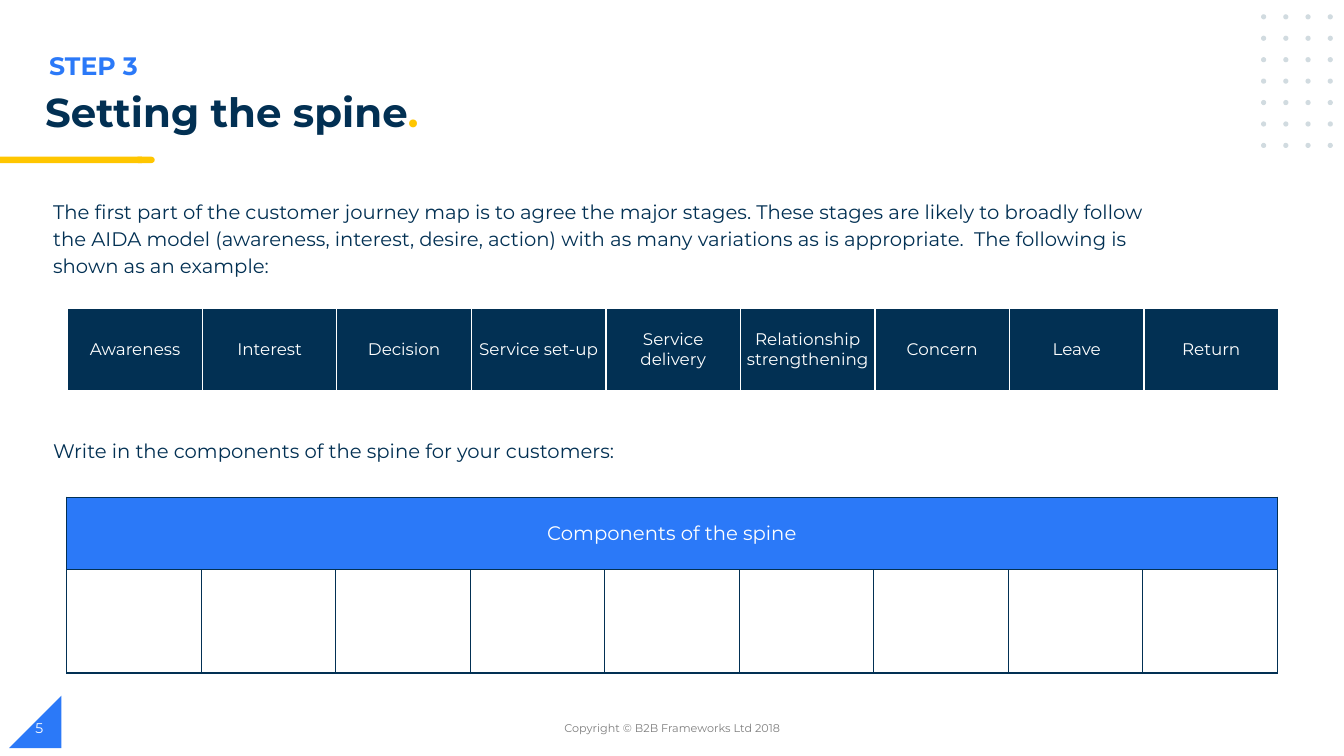
import lxml.etree
import pptx
import pptx.dml.color
import pptx.enum.shapes
import pptx.enum.text
import pptx.oxml.ns
import pptx.util

Cm = pptx.util.Cm
RGBColor = pptx.dml.color.RGBColor
Shape = pptx.enum.shapes.MSO_SHAPE
Align = pptx.enum.text.PP_ALIGN
Anchor = pptx.enum.text.MSO_ANCHOR

NAVY = RGBColor(0x02, 0x30, 0x53)
BLUE = RGBColor(0x2B, 0x79, 0xF8)
YELLOW = RGBColor(0xFF, 0xC6, 0x00)
WHITE = RGBColor(0xFF, 0xFF, 0xFF)
GREY = RGBColor(0x7F, 0x7F, 0x7F)
PALE = RGBColor(0xD1, 0xDB, 0xE0)

STAGES = ["Awareness", "Interest", "Decision", "Service set-up", "Service delivery",
          "Relationship strengthening", "Concern", "Leave", "Return"]
SPINE_HEADING = "Components of the spine"
INTRO = ("The first part of the customer journey map is to agree the major stages. "
         "These stages are likely to broadly follow the AIDA model (awareness, interest, "
         "desire, action) with as many variations as is appropriate.  The following is "
         "shown as an example:")

HEADING = {"size": pptx.util.Pt(28.8), "bold": True}
STEP = {"size": pptx.util.Pt(18), "bold": True}
BODY = {"size": pptx.util.Pt(14)}
STAGE = {"size": pptx.util.Pt(12)}
NUMBER = {"size": pptx.util.Pt(10)}
SMALL = {"size": pptx.util.Pt(8)}

TOP = {"vertical_anchor": Anchor.TOP}
MIDDLE = {"vertical_anchor": Anchor.MIDDLE}
CENTRED = {"alignment": Align.CENTER}

TEXTS = [
    ((0.89, 2.21, 14.33, 1.42), [("Setting the spine", NAVY), (".", YELLOW)],
     HEADING, {"line_spacing": 0.9}, TOP),
    ((1.09, 4.83, 28.37, 2.4), [(INTRO, NAVY)], BODY, {"line_spacing": 1.15}, TOP),
    ((1.09, 10.94, 28.37, 0.9),
     [("Write in the components of the spine for your customers:", NAVY)], BODY, {}, TOP),
    ((11.23, 17.83, 11.43, 1.02), [("Copyright © B2B Frameworks Ltd 2018", GREY)],
     SMALL, CENTRED, MIDDLE),
    ((0.64, 17.83, 7.62, 1.02), [("5", WHITE)], NUMBER, {}, MIDDLE),
    ((0.99, 1.14, 3.99, 1.02), [("STEP 3", BLUE)], STEP, {}, TOP),
]

DOT_COLUMNS, DOT_ROWS = 4, 7
DOT_LEFT, DOT_TOP, DOT_SIZE = 31.78, 0.36, 0.13
DOT_STEP_X, DOT_STEP_Y = 0.56, 0.54
COLUMN_WIDTH = 3.39
CELL_MARGIN = 0.1


def apply(target, values):
    for name, value in values.items():
        setattr(target, name, value)


def add_spans(para, spans, font):
    for words, color in spans:
        span = para.add_run()
        span.text = words
        apply(span.font, {"name": "Montserrat", **font})
        span.font.color.rgb = color


def add_text(page, place, spans, font, layout, frame):
    box = page.shapes.add_textbox(*map(Cm, place))
    apply(box.text_frame, {"word_wrap": True, **frame})
    para = box.text_frame.paragraphs[0]
    apply(para, layout)
    add_spans(para, spans, font)


def add_block(page, kind, place, color):
    block = page.shapes.add_shape(kind, *map(Cm, place))
    block.shadow.inherit = False
    block.fill.solid()
    block.fill.fore_color.rgb = color
    block.line.fill.background()
    return block


def add_borders(cell, color):
    properties = cell._tc.get_or_add_tcPr()
    qn = pptx.oxml.ns.qn
    for index, side in enumerate(("a:lnL", "a:lnR", "a:lnT", "a:lnB")):
        line = lxml.etree.Element(qn(side), w=str(pptx.util.Pt(1)))
        fill = lxml.etree.SubElement(line, qn("a:solidFill"))
        lxml.etree.SubElement(fill, qn("a:srgbClr"), val=str(color))
        properties.insert(index, line)


def add_grid(page, left, top, heights, border):
    count = len(STAGES)
    frame = page.shapes.add_table(len(heights), count, Cm(left), Cm(top),
                                  Cm(COLUMN_WIDTH * count), Cm(sum(heights)))
    table = frame.table
    apply(table, {"first_row": False, "horz_banding": False})
    for column in table.columns:
        column.width = Cm(COLUMN_WIDTH)
    for row, height in zip(table.rows, heights):
        row.height = Cm(height)
    for cell in table.iter_cells():
        cell.fill.background()
        add_borders(cell, border)
    return table


def fill_cell(cell, words, font, color):
    cell.fill.solid()
    cell.fill.fore_color.rgb = color
    apply(cell, {"margin_left": Cm(CELL_MARGIN), "margin_right": Cm(CELL_MARGIN),
                 "margin_top": 0, "margin_bottom": 0, **MIDDLE})
    para = cell.text_frame.paragraphs[0]
    apply(para, CENTRED)
    add_spans(para, [(words, WHITE)], font)


def main():
    deck = pptx.Presentation()
    apply(deck, {"slide_width": Cm(33.87), "slide_height": Cm(19.05)})
    page = deck.slides.add_slide(deck.slide_layouts[6])

    corner = add_block(page, Shape.RIGHT_TRIANGLE, (0.23, 17.53, 1.32, 1.32), BLUE)
    corner._element.spPr.xfrm.set("flipH", "1")
    add_block(page, Shape.FLOWCHART_TERMINATOR, (3.4, 3.95, 0.5, 0.16), YELLOW)
    add_block(page, Shape.RECTANGLE, (0, 3.95, 3.58, 0.16), YELLOW)
    for row in range(DOT_ROWS):
        for column in range(DOT_COLUMNS):
            place = (DOT_LEFT + column * DOT_STEP_X, DOT_TOP + row * DOT_STEP_Y,
                     DOT_SIZE, DOT_SIZE)
            add_block(page, Shape.OVAL, place, PALE)

    for text in TEXTS:
        add_text(page, *text)

    spine = add_grid(page, 1.68, 12.53, [1.83, 2.6], NAVY)
    spine.cell(0, 0).merge(spine.cell(0, len(STAGES) - 1))
    fill_cell(spine.cell(0, 0), SPINE_HEADING, BODY, BLUE)

    example = add_grid(page, 1.71, 7.78, [2.06], WHITE)
    for column, stage in enumerate(STAGES):
        fill_cell(example.cell(0, column), stage, STAGE, NAVY)

    deck.save("out.pptx")


if __name__ == "__main__":
    main()
